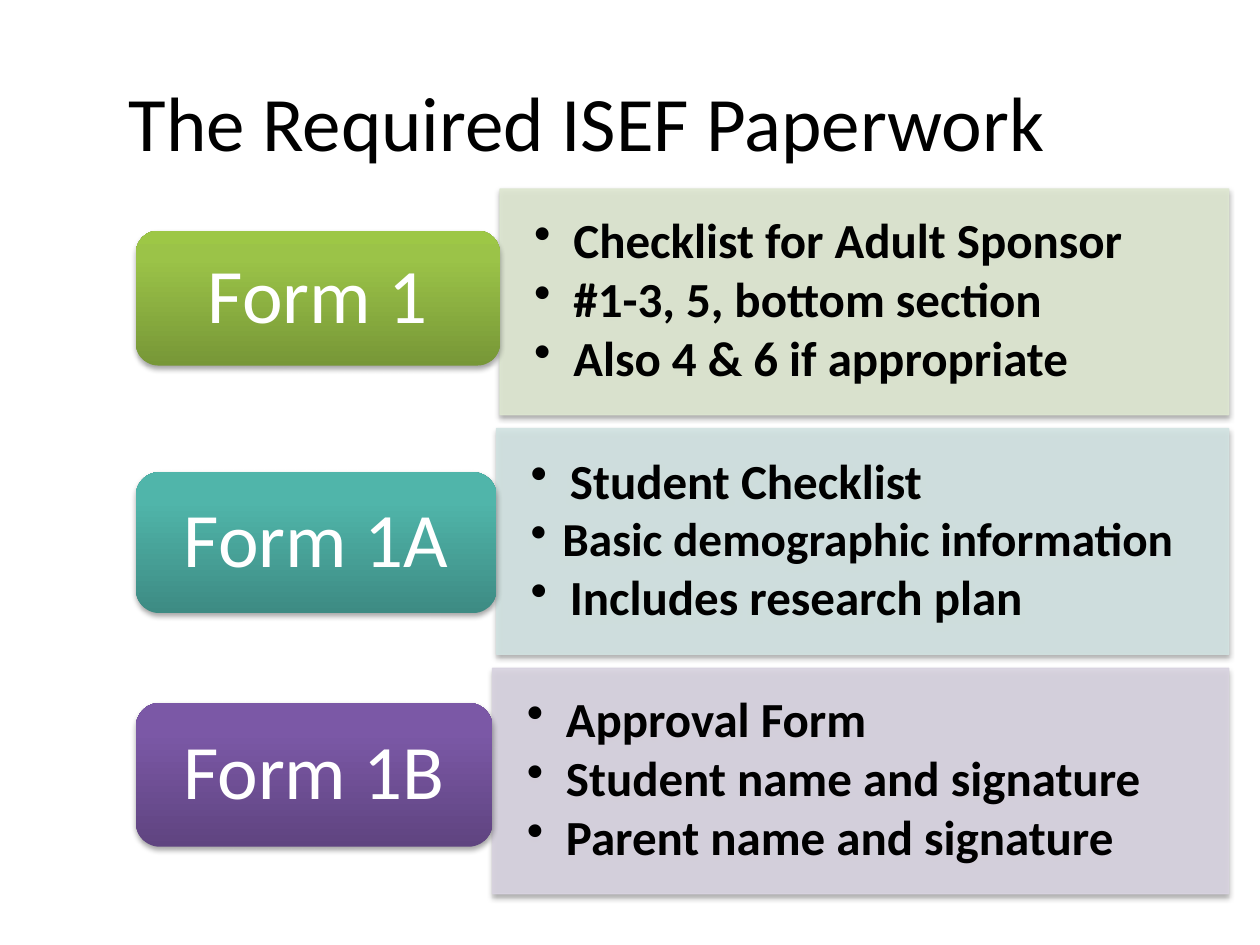
"""Build a slide that lists the required ISEF forms beside their contents."""
from copy import deepcopy
from dataclasses import dataclass

from lxml import etree
from pptx import Presentation
from pptx import util as u
from pptx.dml.color import RGBColor
from pptx.enum import shapes, text
from pptx.oxml.ns import qn

FONT = "Calibri"
BADGE_LEFT = 2.74
PANEL_RIGHT = 24.77
PANEL_TOP = 3.81
PANEL_HEIGHT = 4.55
PANEL_PITCH = 4.83


@dataclass
class Item:
    wording: str
    size: int = 28
    indent: float = 0.79


@dataclass
class Form:
    name: str
    badge_top: float
    badge_height: float
    badge_colors: tuple[str, str, str]
    panel_left: float
    panel_color: str
    items: list[Item]


FORMS = [
    Form("Form 1", 4.65, 2.72, ("779737", "9BC348", "9DC746"), 10.08, "DEE7D1",
         [Item("Checklist for Adult Sponsor"), Item("#1-3, 5, bottom section"),
          Item("Also 4 & 6 if appropriate")]),
    Form("Form 1A", 9.52, 2.84, ("3D8B83", "50B5AA", "4EB8AC"), 10.01, "D2E3E2",
         [Item("Student Checklist"), Item("Basic demographic information", 27, 0.64),
          Item("Includes research plan")]),
    Form("Form 1B", 14.17, 2.9, ("5F4480", "7B58A6", "7C57A8"), 9.93, "D8D3E0",
         [Item("Approval Form"), Item("Student name and signature"),
          Item("Parent name and signature")]),
]


def rgb(value: str) -> RGBColor:
    return RGBColor.from_string(value)


def apply(target, formats: dict) -> None:
    for name, value in formats.items():
        setattr(target, name, value)


def frame_format(side: float, edge: float) -> dict:
    return {"word_wrap": True, "vertical_anchor": text.MSO_ANCHOR.MIDDLE,
            "margin_left": u.Cm(side), "margin_right": u.Cm(side),
            "margin_top": u.Cm(edge), "margin_bottom": u.Cm(edge)}


def write(paragraph, wording: str, size: int, color: str, bold: bool = False) -> None:
    run = paragraph.add_run()
    run.text = wording
    apply(run.font, {"name": FONT, "size": u.Pt(size), "bold": bold})
    run.font.color.rgb = rgb(color)


def add_shadow(shape) -> None:
    shape.shadow.inherit = False
    effects = shape._element.spPr.find(qn("a:effectLst"))
    shadow = etree.SubElement(effects, qn("a:outerShdw"), blurRad="40000", dist="23000",
                              dir="5400000", rotWithShape="0")
    color = etree.SubElement(shadow, qn("a:srgbClr"), val="000000")
    etree.SubElement(color, qn("a:alpha"), val="35000")


def add_panel(slide, form: Form, top: float) -> None:
    panel = slide.shapes.add_shape(
        shapes.MSO_SHAPE.RECTANGLE, u.Cm(form.panel_left), u.Cm(top),
        u.Cm(PANEL_RIGHT - form.panel_left), u.Cm(PANEL_HEIGHT))
    panel.fill.solid()
    panel.fill.fore_color.rgb = rgb(form.panel_color)
    panel.line.color.rgb = rgb(form.panel_color)
    panel.line.width = u.Pt(0.75)
    for color in panel._element.spPr.iter(qn("a:srgbClr")):
        etree.SubElement(color, qn("a:alpha"), val="90000")
    add_shadow(panel)
    frame = panel.text_frame
    apply(frame, frame_format(0.69, 0.36))
    for index, item in enumerate(form.items):
        paragraph = frame.add_paragraph() if index else frame.paragraphs[0]
        properties = paragraph._p.get_or_add_pPr()
        properties.set("marL", str(u.Cm(item.indent)))
        properties.set("indent", str(-u.Cm(item.indent)))
        etree.SubElement(properties, qn("a:buChar"), char="•")
        apply(paragraph, {"level": 1, "alignment": text.PP_ALIGN.LEFT,
                          "line_spacing": 0.9, "space_after": u.Pt(3.5)})
        write(paragraph, item.wording, item.size, "000000", True)


def add_badge(slide, form: Form) -> None:
    badge = slide.shapes.add_shape(
        shapes.MSO_SHAPE.ROUNDED_RECTANGLE, u.Cm(BADGE_LEFT), u.Cm(form.badge_top),
        u.Cm(form.panel_left - BADGE_LEFT), u.Cm(form.badge_height))
    badge.fill.gradient()
    badge.fill.gradient_angle = 90
    stop_list = badge._element.spPr.find(".//" + qn("a:gsLst"))
    stop_list.append(deepcopy(stop_list[-1]))
    for stop, position, color in zip(badge.fill.gradient_stops, (0, 0.8, 1), form.badge_colors):
        stop.position = position
        stop.color.rgb = rgb(color)
    badge.line.fill.background()
    add_shadow(badge)
    apply(badge.text_frame, frame_format(0.46, 0.23))
    paragraph = badge.text_frame.paragraphs[0]
    apply(paragraph, {"alignment": text.PP_ALIGN.CENTER, "line_spacing": 0.9})
    write(paragraph, form.name, 44, "FFFFFF")


def add_title(slide, wording: str) -> None:
    title = slide.shapes.title
    apply(title, {"left": u.Cm(2.34), "top": u.Cm(0.84),
                  "width": u.Cm(22.43), "height": u.Cm(3.18)})
    title.text_frame.vertical_anchor = text.MSO_ANCHOR.MIDDLE
    paragraph = title.text_frame.paragraphs[0]
    paragraph.alignment = text.PP_ALIGN.LEFT
    write(paragraph, wording, 44, "000000")


def main() -> None:
    deck = Presentation()
    apply(deck, {"slide_width": u.Cm(25.4), "slide_height": u.Cm(19.05)})
    slide = deck.slides.add_slide(deck.slide_layouts[5])
    add_title(slide, "The Required ISEF Paperwork")
    for row, form in enumerate(FORMS):
        add_panel(slide, form, PANEL_TOP + row * PANEL_PITCH)
        add_badge(slide, form)
    deck.save("out.pptx")


if __name__ == "__main__":
    main()
